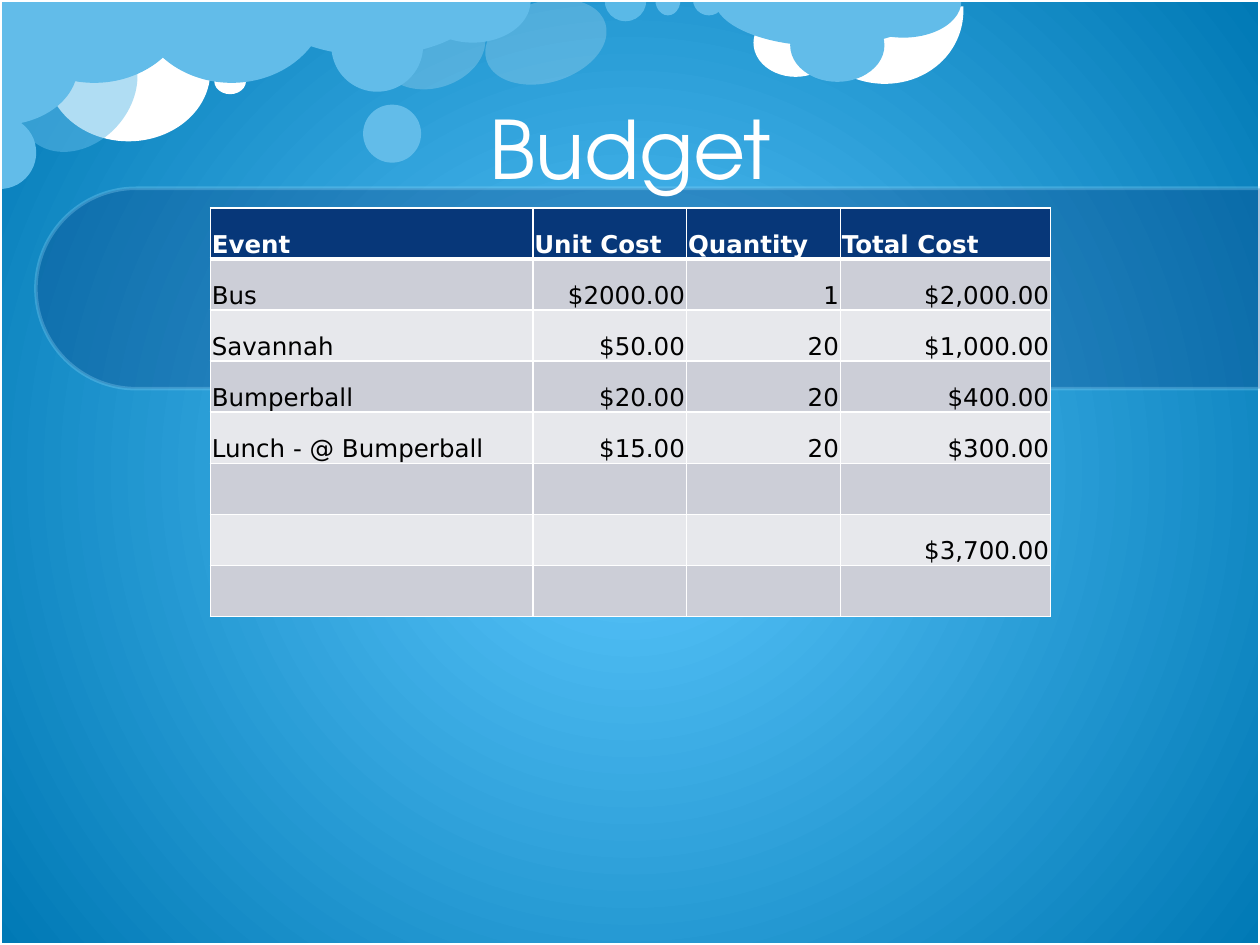
from lxml.etree import SubElement
from pptx import Presentation
from pptx.dml.color import RGBColor
from pptx.enum.shapes import MSO_SHAPE as Shape
from pptx.enum.text import MSO_ANCHOR as Anchor, PP_ALIGN as Align
from pptx.oxml.ns import qn
from pptx.util import Cm, Pt

COLORS = {
    "white": "FFFFFF", "black": "000000", "cloud": "62BCE9", "mist": "8FD9FB",
    "navy": "073779", "odd": "CCCED7", "even": "E7E8EC",
    "sky": "5DC9FF", "deep": "0079B5",
}
HALF_TURN = (0, 108)
CLOUDS = [
    (Shape.OVAL, (7.9, -0.13, 1.63, 2.18), "white", 20, 72.8),
    (Shape.OVAL, (0.94, 0.03, 3.3, 2.82), "white", 100, 0),
    (Shape.ARC, (16.23, -1.52, 3.07, 3.33), "white", 100, 106.5),
    (Shape.OVAL, (15.19, 0.18, 1.7, 1.37), "white", 100, 0),
    (Shape.PIE, (-0.03, -1.68, 3.86, 3.35), "cloud", 100, 0),
    (Shape.PIE, (5.28, -1.12, 4.45, 2.24), "cloud", 100, 0),
    (Shape.OVAL, (7.32, 2.11, 1.17, 1.17), "cloud", 100, 0),
    (Shape.OVAL, (0.48, 0.46, 2.16, 2.72), "cloud", 50, 41.8),
    (Shape.PIE, (-0.74, 2.34, 1.47, 1.47), "cloud", 100, 270),
    (Shape.OVAL, (4.32, 1.37, 0.64, 0.53), "white", 100, 0),
    (Shape.PIE, (2.74, -1.68, 3.86, 3.35), "cloud", 100, 0),
    (Shape.PIE, (14.4, -0.97, 4.45, 1.9), "cloud", 100, 0),
    (Shape.OVAL, (15.93, 0.18, 1.9, 1.47), "cloud", 100, 0),
    (Shape.PIE, (17.04, -0.71, 2.34, 1.47), "cloud", 100, 0),
    (Shape.OVAL, (10.19, -0.41, 1.63, 2.51), "white", 20, 72.8),
    (Shape.PIE, (12.19, -0.41, 0.84, 0.84), "mist", 50, 0),
    (Shape.PIE, (13.21, -0.33, 0.51, 0.64), "cloud", 100, 0),
    (Shape.PIE, (13.97, -0.33, 0.64, 0.64), "cloud", 100, 0),
    (Shape.OVAL, (6.68, 0, 1.85, 1.85), "cloud", 100, 0),
    (Shape.PIE, (8.36, -0.84, 2.34, 1.7), "cloud", 100, 0),
    (Shape.PIE, (-1.19, -0.23, 2.36, 3.15), "cloud", 100, 270),
]
ADJUSTMENTS = {Shape.PIE: HALF_TURN, Shape.ARC: (151.8, 44.48)}
BUDGET = [
    ("Event", "Unit Cost", "Quantity", "Total Cost"),
    ("Bus", "$2000.00", "1", "$2,000.00"),
    ("Savannah", "$50.00", "20", "$1,000.00"),
    ("Bumperball", "$20.00", "20", "$400.00"),
    ("Lunch - @ Bumperball", "$15.00", "20", "$300.00"),
    ("", "", "", ""),
    ("", "", "", "$3,700.00"),
    ("", "", "", ""),
]


class BudgetSlide:
    """Holds the style and the slide, and draws each kind of element."""

    title_font = "TeX Gyre Adventor"
    body_font = "DejaVu Sans"

    def __init__(self, deck):
        self.slide = deck.slides.add_slide(deck.slide_layouts[5])

    def color(self, name):
        return RGBColor.from_string(COLORS[name])

    def paint(self, fill, name, opacity=100):
        fill.solid()
        fill.fore_color.rgb = self.color(name)
        if opacity < 100:
            tint = fill._xPr.find(f"{qn('a:solidFill')}/{qn('a:srgbClr')}")
            SubElement(tint, qn("a:alpha"), val=str(opacity * 1000))

    def background(self, center, edge):
        fill = self.slide.background.fill
        fill.gradient()
        for stop, name in zip(fill.gradient_stops, (center, edge)):
            stop.color.rgb = self.color(name)
        gradient = fill._xPr.find(qn("a:gradFill"))
        gradient.remove(gradient.find(qn("a:lin")))
        circle = SubElement(gradient, qn("a:path"), path="circle")
        SubElement(circle, qn("a:fillToRect"), l="50000", t="50000", r="50000", b="50000")

    def shape(self, kind, place, fill=None, opacity=100, turn=0, line=None,
              line_opacity=100, adjust=()):
        shape = self.slide.shapes.add_shape(kind, *map(Cm, place))
        shape.shadow.inherit = False
        shape.rotation = turn
        for index, value in enumerate(adjust):
            shape.adjustments[index] = value
        if fill:
            self.paint(shape.fill, fill, opacity)
        else:
            shape.fill.background()
        if line:
            shape.line.width = Pt(2)
            self.paint(shape.line.fill, line, line_opacity)
        else:
            shape.line.fill.background()

    def title(self, text, place):
        title = self.slide.shapes.title
        title.element.getparent().append(title.element)
        title.left, title.top, title.width, title.height = map(Cm, place)
        frame = title.text_frame
        frame.text = text
        frame.vertical_anchor = Anchor.MIDDLE
        para = frame.paragraphs[0]
        para.alignment = Align.CENTER
        para.line_spacing = Pt(56)
        self.format(para, self.title_font, 46, "white")

    def format(self, para, face, size, color, bold=False):
        para.font.size = Pt(size)
        for span in para.runs:
            font = span.font
            font.name, font.size, font.bold = face, Pt(size), bold
            font.color.rgb = self.color(color)

    def borders(self, cell, top, bottom):
        properties = cell._tc.get_or_add_tcPr()
        for side, width in (("L", 1), ("R", 1), ("T", top), ("B", bottom)):
            edge = SubElement(properties, qn(f"a:ln{side}"), w=str(Pt(width)))
            solid = SubElement(edge, qn("a:solidFill"))
            SubElement(solid, qn("a:srgbClr"), val=COLORS["white"])

    def cell(self, cell, text, row, column):
        header = row == 0
        self.borders(cell, 3 if row == 1 else 1, 3 if header else 1)
        self.paint(cell.fill, "navy" if header else "odd" if row % 2 else "even")
        cell.vertical_anchor = Anchor.BOTTOM
        cell.margin_left = cell.margin_right = cell.margin_top = Cm(0.03)
        cell.margin_bottom = 0
        cell.text = text
        para = cell.text_frame.paragraphs[0]
        para.alignment = Align.LEFT if header or column == 0 else Align.RIGHT
        self.format(para, self.body_font, 14, "white" if header else "black", header)

    def table(self, rows, left, top, widths, row_height):
        table = self.slide.shapes.add_table(
            len(rows), len(widths), Cm(left), Cm(top),
            Cm(sum(widths)), Cm(row_height * len(rows))).table
        for column, width in zip(table.columns, widths):
            column.width = Cm(width)
        for row_index, row in enumerate(rows):
            table.rows[row_index].height = Cm(row_height)
            for column_index, text in enumerate(row):
                self.cell(table.cell(row_index, column_index), text, row_index, column_index)


def main():
    deck = Presentation()
    deck.slide_width, deck.slide_height = Cm(25.4), Cm(19.05)
    page = BudgetSlide(deck)
    page.background("sky", "deep")
    for kind, place, fill, opacity, turn in CLOUDS:
        page.shape(kind, place, fill, opacity, turn, adjust=ADJUSTMENTS.get(kind, ()))
    page.shape(Shape.RECTANGLE, (0, 0, 25.4, 19.05), line="white")
    page.shape(Shape.ROUND_2_SAME_RECTANGLE, (11.05, -6.53, 4.04, 24.69), "navy", 30,
               270, line="mist", line_opacity=30, adjust=(0.5, 0))
    page.title("Budget", (1.98, 0.51, 21.44, 4.88))
    page.table(BUDGET, 4.24, 4.19, (6.5, 3.1, 3.1, 4.24), 1.03)
    deck.save("out.pptx")


if __name__ == "__main__":
    main()
